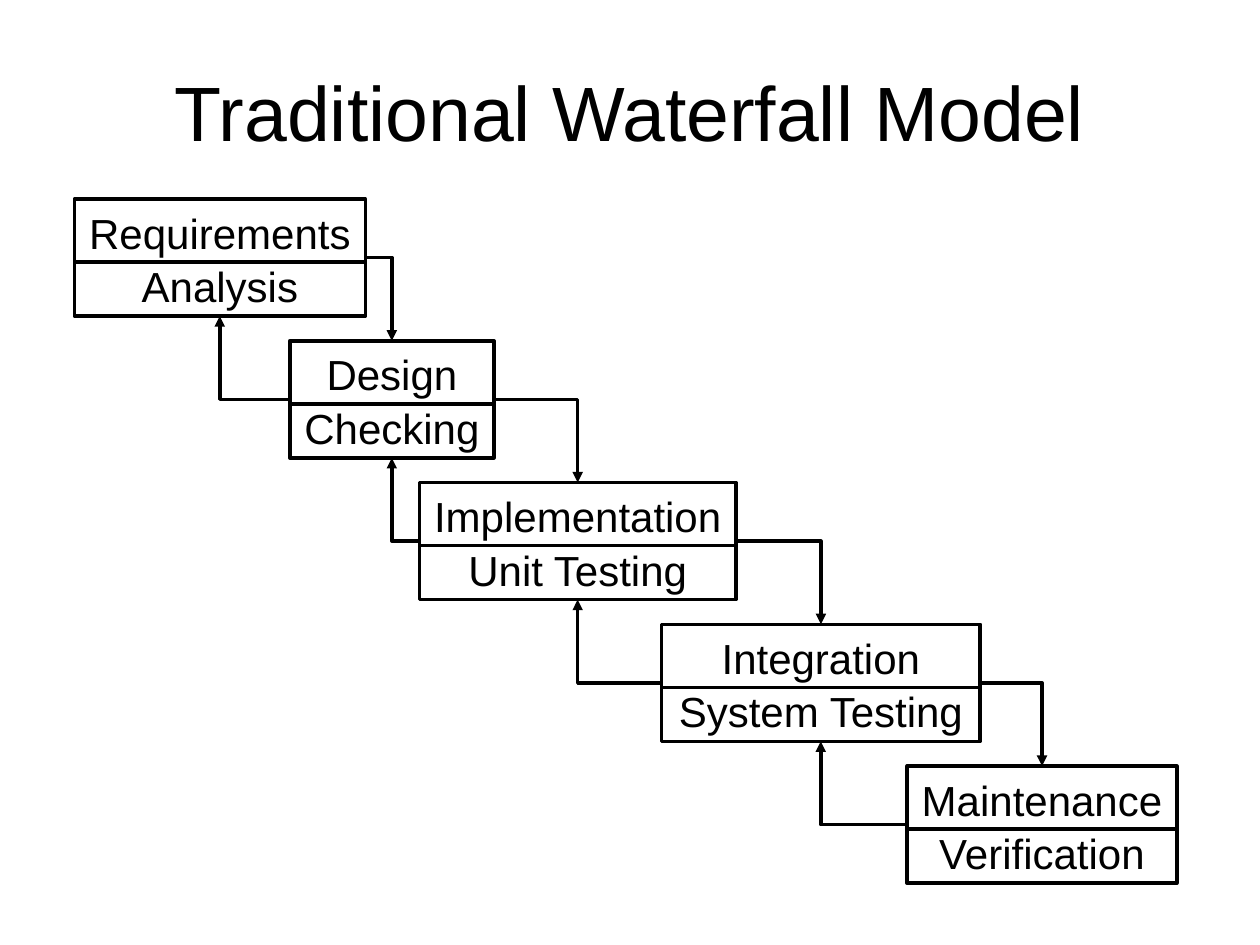
from lxml import etree
from pptx import Presentation
from pptx import util as u
from pptx.dml.color import RGBColor
from pptx.enum import shapes, text
from pptx.oxml.ns import qn

TOP, LEFT, BOTTOM, RIGHT = range(4)


def color(value):
    return RGBColor.from_string(value)


class Diagram:
    font = "Arial"
    ink = "000000"
    line_width = u.Pt(2)

    def __init__(self, slide):
        self.slide = slide

    def add_lines(self, tf, lines, size, spacing=1.0):
        tf.vertical_anchor = text.MSO_ANCHOR.MIDDLE
        p = tf.paragraphs[0]
        p.alignment = text.PP_ALIGN.CENTER
        p.line_spacing = spacing
        for i, line in enumerate(lines):
            if i:
                p.add_line_break()
            r = p.add_run()
            r.text = line
            r.font.name = self.font
            r.font.size = u.Pt(size)
            r.font.color.rgb = color(self.ink)

    def stroke(self, sp):
        sp.line.color.rgb = color(self.ink)
        sp.line.width = self.line_width

    def title(self, words, x, y, w, h):
        box = self.slide.shapes.add_textbox(*map(u.Inches, (x, y, w, h)))
        box.text_frame.word_wrap = True
        self.add_lines(box.text_frame, [words], 44)

    def connector(self, parent, kind, x1, y1, x2, y2):
        cx = parent.add_connector(kind, x1, y1, x2, y2)
        self.stroke(cx)
        etree.SubElement(cx._element.spPr, qn("a:effectLst"))
        return cx

    def stage(self, lines, x, y, w, h, divider):
        group = self.slide.shapes.add_group_shape().shapes
        sp = group.add_shape(shapes.MSO_SHAPE.RECTANGLE, *map(u.Inches, (x, y, w, h)))
        sp.shadow.inherit = False
        sp.fill.background()
        self.stroke(sp)
        tf = sp.text_frame
        tf.word_wrap = False
        tf.auto_size = text.MSO_AUTO_SIZE.SHAPE_TO_FIT_TEXT
        self.add_lines(tf, lines, 24, 1.06)
        ends = map(u.Inches, (x, y + divider, x + w, y + divider))
        self.connector(group, shapes.MSO_CONNECTOR.STRAIGHT, *ends)
        return sp

    def arrow(self, start, start_side, end, end_side):
        cx = self.connector(self.slide.shapes, shapes.MSO_CONNECTOR.ELBOW, 0, 0, 0, 0)
        cx.begin_connect(start, start_side)
        cx.end_connect(end, end_side)
        props = cx._element.spPr
        props.find(qn("a:prstGeom")).set("prst", "bentConnector2")
        etree.SubElement(props.find(qn("a:ln")), qn("a:tailEnd"), type="triangle")


def main():
    prs = Presentation()
    prs.slide_width, prs.slide_height = u.Inches(10), u.Inches(7.5)
    s = prs.slides.add_slide(prs.slide_layouts[6])
    diagram = Diagram(s)
    diagram.title("Traditional Waterfall Model", 0.5, 0.25, 9, 1.25)

    stages = [
        (("Requirements", "Analysis"), 0.59, 2.31),
        (("Design", "Checking"), 2.3, 1.62),
        (("Implementation", "Unit Testing"), 3.33, 2.51),
        (("Integration", "System Testing"), 5.25, 2.53),
        (("Maintenance", "Verification"), 7.2, 2.14),
    ]
    first_top, last_top, height, divider = 1.58, 6.08, 0.93, 0.5
    step = (last_top - first_top) / (len(stages) - 1)
    boxes = [
        diagram.stage(lines, x, first_top + i * step, w, height, divider)
        for i, (lines, x, w) in enumerate(stages)
    ]
    for upper, lower in zip(boxes, boxes[1:]):
        diagram.arrow(upper, RIGHT, lower, TOP)
        diagram.arrow(lower, LEFT, upper, BOTTOM)

    prs.save("out.pptx")


if __name__ == "__main__":
    main()
